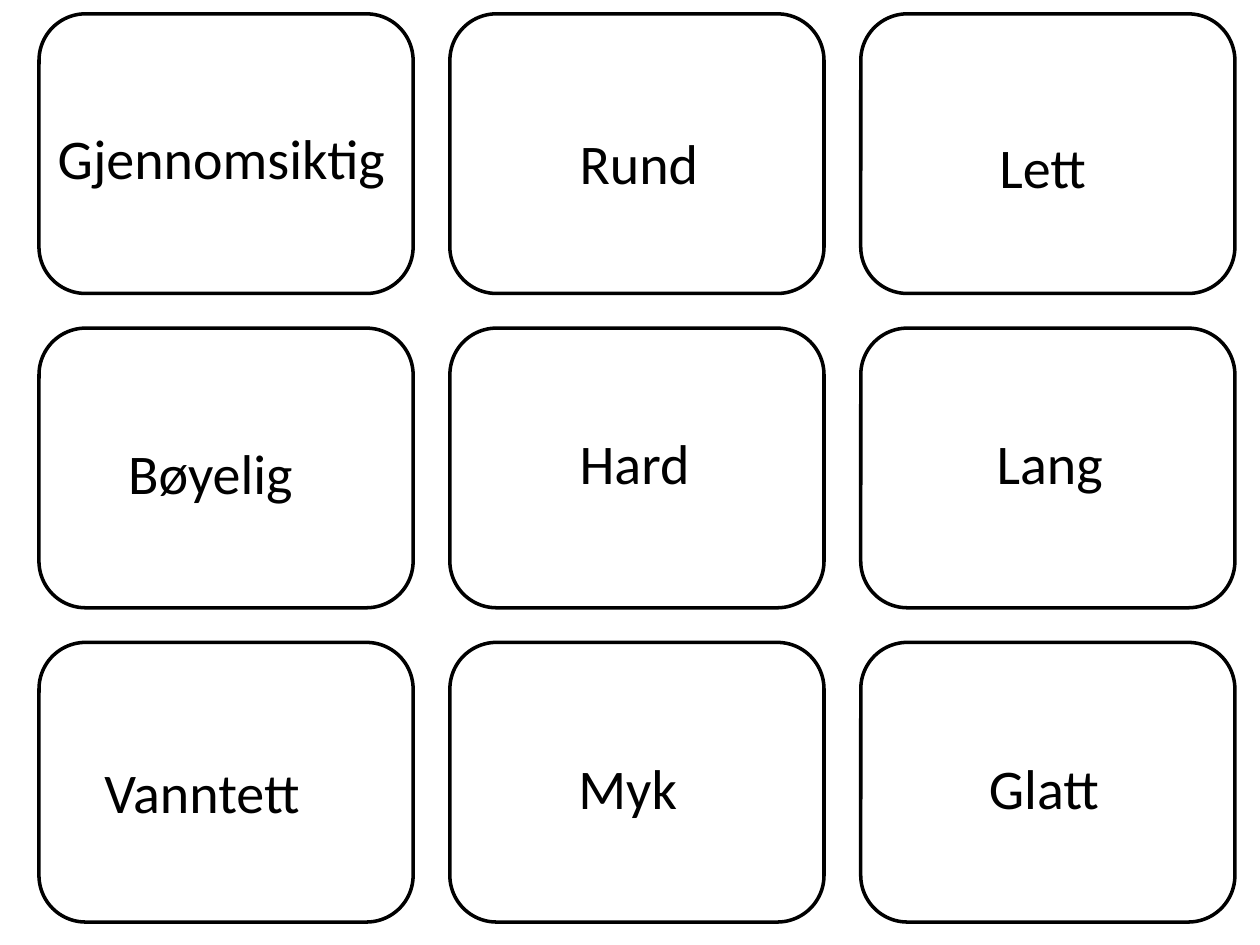
import pptx
import pptx.util
import pptx.dml.color
import pptx.enum.shapes
import pptx.enum.text

Pt = pptx.util.Pt
BLACK = pptx.dml.color.RGBColor(0, 0, 0)
WHITE = pptx.dml.color.RGBColor(255, 255, 255)

# Words by row: text, box left, top, width, and text indent
ROWS = [
    [("Gjennomsiktig", 25.9, 67, 241.2, 0),
     ("Rund", 302.4, 69.8, 122.4, 21.7),
     ("Lett", 535, 72, 128.9, 28.9)],
    [("Bøyelig", 66.2, 247, 114.5, 0),
     ("Hard", 302.4, 241.2, 128.9, 21.7),
     ("Lang", 540.7, 241.2, 128.9, 21.7)],
    [("Vanntett", 52.6, 429.1, 153.4, 0),
     ("Myk", 308.9, 427, 119.5, 14.5),
     ("Glatt", 550.8, 427, 155.5, 7.2)],
]

# Card grid
LEFT, TOP = 22.3, 7.9
WIDE, HIGH = 213.8, 159.8
STEP_X, STEP_Y = 234.8, 179.6
TEXT_HIGH = 46


def add_card(slide, row, col):
    card = slide.shapes.add_shape(
        pptx.enum.shapes.MSO_SHAPE.ROUNDED_RECTANGLE,
        Pt(LEFT + col * STEP_X), Pt(TOP + row * STEP_Y), Pt(WIDE), Pt(HIGH))
    card.shadow.inherit = False
    card.fill.solid()
    card.fill.fore_color.rgb = WHITE
    card.line.color.rgb = BLACK
    card.line.width = Pt(2)


def add_word(slide, text, left, top, width, indent):
    box = slide.shapes.add_textbox(Pt(left), Pt(top), Pt(width), Pt(TEXT_HIGH))
    frame = box.text_frame
    frame.word_wrap = True
    frame.auto_size = pptx.enum.text.MSO_AUTO_SIZE.SHAPE_TO_FIT_TEXT
    frame.text = text
    para = frame.paragraphs[0]
    if indent:
        para._p.get_or_add_pPr().set("marL", str(int(Pt(indent))))
    font = para.runs[0].font
    font.name = "Calibri"
    font.size = Pt(32)
    font.color.rgb = BLACK


def main():
    deck = pptx.Presentation()
    deck.slide_width, deck.slide_height = Pt(720), Pt(540)
    slide = deck.slides.add_slide(deck.slide_layouts[6])

    # Cards behind, each with its word on top
    for row, words in enumerate(ROWS):
        for col, word in enumerate(words):
            add_card(slide, row, col)
            add_word(slide, *word)

    deck.save("out.pptx")


if __name__ == "__main__":
    main()
